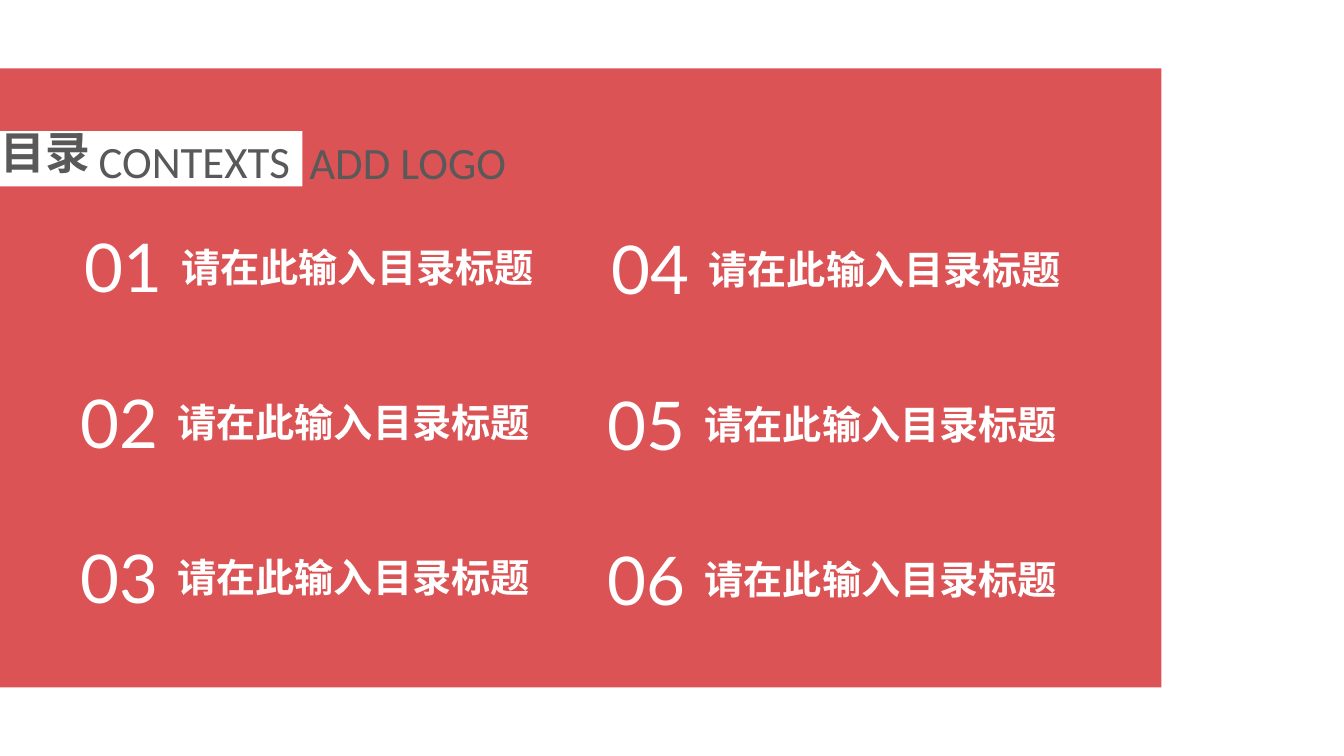
from dataclasses import dataclass

from lxml.etree import SubElement
from pptx import Presentation
from pptx.dml.color import RGBColor
from pptx.enum.shapes import MSO_SHAPE
from pptx.enum.text import MSO_AUTO_SIZE
from pptx.oxml.ns import qn
from pptx.util import Inches, Pt


@dataclass(frozen=True)
class Theme:
    red: str = "DB5355"
    white: str = "FFFFFF"
    gray: str = "595959"
    latin: str = "Calibri"
    digits: str = "Lato"
    chinese: str = "Noto Sans CJK SC"
    heading_size: int = 32
    number_size: int = 48
    entry_size: int = 28


THEME = Theme()
ENTRY_TEXT = "请在此输入目录标题"
ROWS = 3
ROW_PITCH = 1.54
COLUMNS = [(0.7, 2.19), (5.93, 2.21)]  # left and top of each column
FIRST_ROW_SHIFT = 0.04


def add_panel(slide, left, top, width, height, color):
    shape = slide.shapes.add_shape(
        MSO_SHAPE.RECTANGLE, Inches(left), Inches(top), Inches(width), Inches(height)
    )
    shape.shadow.inherit = False
    shape.fill.solid()
    shape.fill.fore_color.rgb = RGBColor.from_string(color)
    shape.line.fill.background()


def add_label(slide, text, box, size, font_name, color, bold=False):
    textbox = slide.shapes.add_textbox(*(Inches(length) for length in box))
    frame = textbox.text_frame
    frame.word_wrap = True
    frame.auto_size = MSO_AUTO_SIZE.SHAPE_TO_FIT_TEXT
    run = frame.paragraphs[0].add_run()
    run.text = text
    font = run.font
    font.size = Pt(size)
    font.bold = bold
    font.color.rgb = RGBColor.from_string(color)
    font.name = font_name
    # Chinese glyphs take the East Asian typeface
    SubElement(run._r.get_or_add_rPr(), qn("a:ea")).set("typeface", font_name)


def add_heading(slide, text, box, font_name=THEME.latin, bold=False):
    add_label(slide, text, box, THEME.heading_size, font_name, THEME.gray, bold)


def add_entry(slide, number, left, top):
    add_label(slide, f"{number:02d}", (left, top, 1.33, 1.7),
              THEME.number_size, THEME.digits, THEME.white)
    add_label(slide, ENTRY_TEXT, (left + 0.96, top + 0.17, 3.91, 0.57),
              THEME.entry_size, THEME.chinese, THEME.white, bold=True)


def main():
    presentation = Presentation()
    presentation.slide_width = Inches(13.33)
    presentation.slide_height = Inches(7.5)
    slide = presentation.slides.add_slide(presentation.slide_layouts[6])

    # Background panel and heading bar
    add_panel(slide, 0, 0.68, 11.52, 6.14, THEME.red)
    add_panel(slide, -0.02, 1.3, 3.02, 0.55, THEME.white)

    # Heading
    add_heading(slide, "目录", (-0.09, 1.19, 1.2, 0.63), THEME.chinese, bold=True)
    add_heading(slide, "CONTEXTS", (0.88, 1.28, 2.64, 0.63))
    add_heading(slide, "ADD LOGO", (2.97, 1.29, 2.64, 0.63))

    # Contents entries, numbered down each column
    for column, (left, top) in enumerate(COLUMNS):
        for row in range(ROWS):
            shift = FIRST_ROW_SHIFT if row == 0 else 0
            add_entry(slide, column * ROWS + row + 1, left + shift, top + row * ROW_PITCH)

    presentation.save("out.pptx")


if __name__ == "__main__":
    main()
